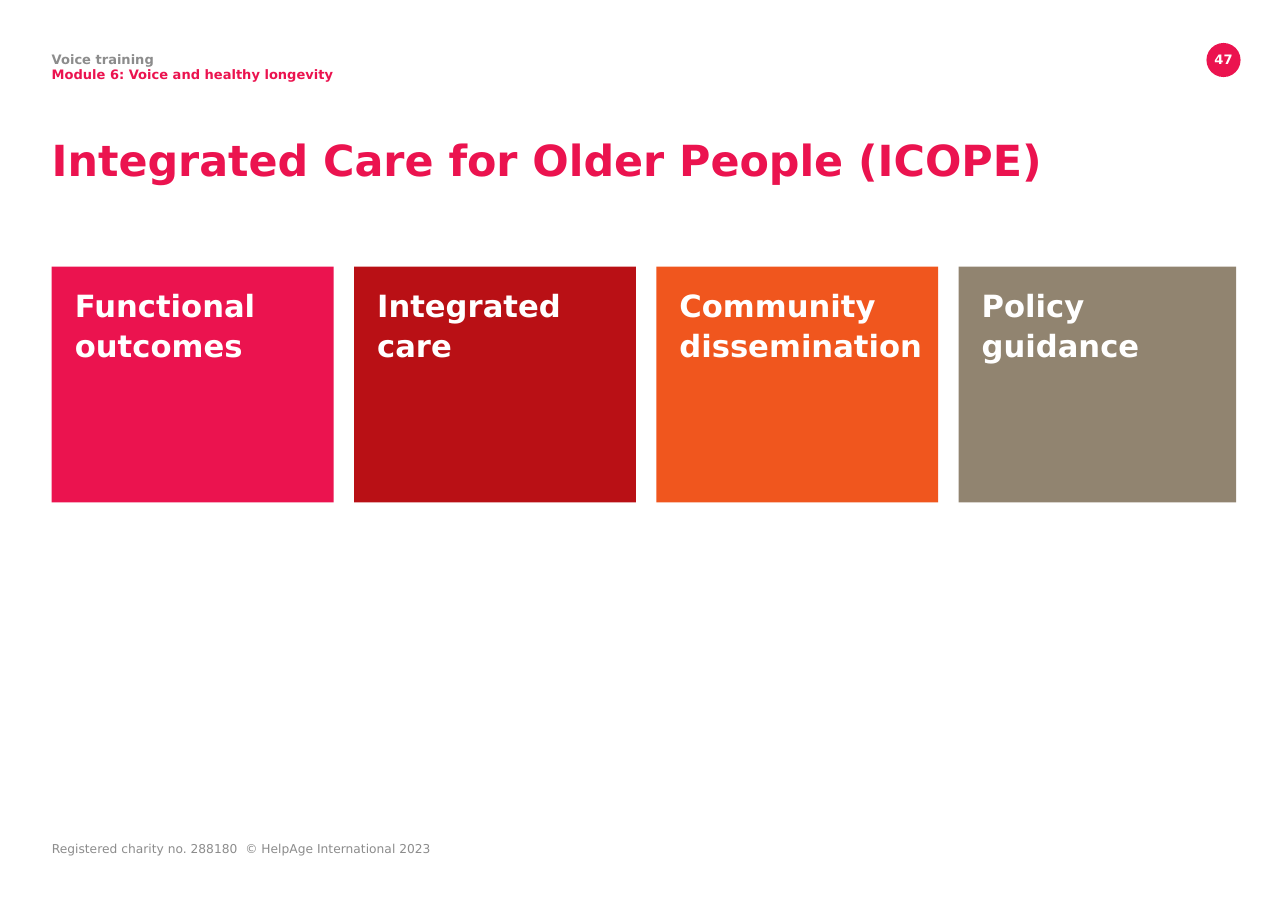
from dataclasses import dataclass

from pptx import Presentation
from pptx.dml.color import RGBColor
from pptx.enum.shapes import MSO_SHAPE
from pptx.enum.text import MSO_ANCHOR, PP_ALIGN
from pptx.util import Inches, Pt

RECT, OVAL = MSO_SHAPE.RECTANGLE, MSO_SHAPE.OVAL
TOP = MSO_ANCHOR.TOP
LEFT, CENTER = PP_ALIGN.LEFT, PP_ALIGN.CENTER


@dataclass(frozen=True)
class Theme:
    font: str = "DejaVu Sans"
    pink: str = "EB134F"
    red: str = "B91015"
    orange: str = "F0561E"
    taupe: str = "918470"
    grey: str = "8C8C8C"
    white: str = "FFFFFF"
    title: float = 28
    card: float = 20
    header: float = 8.5
    footer: float = 8


THEME = Theme()
MARGIN = 0.47
CARD_TOP, CARD_HEIGHT = 2.42, 2.14
CARD_PITCH = (8.7 - MARGIN) / 3
CARDS = [
    ("Functional outcomes", THEME.pink, 2.56),
    ("Integrated care", THEME.red, 2.56),
    ("Community dissemination", THEME.orange, 2.56),
    ("Policy guidance", THEME.taupe, 2.52),
]


def set_frame(tf, left=0, top=0, right=0, bottom=0):
    tf.word_wrap = True
    tf.vertical_anchor = TOP
    tf.margin_left, tf.margin_top = Inches(left), Inches(top)
    tf.margin_right, tf.margin_bottom = Inches(right), Inches(bottom)


def style_paragraph(p, text, size, color, bold=True, spacing=None, align=LEFT):
    p.text = text
    p.alignment = align
    if spacing:
        p.line_spacing = Pt(spacing)
    p.font.name = THEME.font
    p.font.size = Pt(size)
    p.font.bold = bold
    p.font.color.rgb = RGBColor.from_string(color)


def add_text(slide, box, lines, size, **style):
    """Add a text box; lines holds one (text, colour) pair per paragraph."""
    tf = slide.shapes.add_textbox(*map(Inches, box)).text_frame
    set_frame(tf)
    for i, (text, color) in enumerate(lines):
        p = tf.add_paragraph() if i else tf.paragraphs[0]
        style_paragraph(p, text, size, color, **style)


def add_block(slide, kind, box, color):
    sp = slide.shapes.add_shape(kind, *map(Inches, box))
    sp.shadow.inherit = False
    sp.fill.solid()
    sp.fill.fore_color.rgb = RGBColor.from_string(color)
    sp.line.fill.background()
    return sp


def add_card(slide, box, text, color):
    tf = add_block(slide, RECT, box, color).text_frame
    set_frame(tf, left=0.21, top=0.16, right=0.08, bottom=0.08)
    style_paragraph(tf.paragraphs[0], text, THEME.card, THEME.white, spacing=26)


def add_page_number(slide, number):
    add_block(slide, OVAL, (10.95, 0.39, 0.31, 0.31), THEME.pink)
    add_text(slide, (10.95, 0.47, 0.31, 0.22), [(number, THEME.white)],
             THEME.header, align=CENTER)


def main():
    prs = Presentation()
    prs.slide_width, prs.slide_height = Inches(11.69), Inches(8.27)
    slide = prs.slides.add_slide(prs.slide_layouts[6])

    add_page_number(slide, "47")
    add_text(slide, (MARGIN, 7.64, 4.61, 0.33),
             [("Registered charity no. 288180  © HelpAge International 2023", THEME.grey)],
             THEME.footer, bold=False)
    add_text(slide, (MARGIN, 1.22, 9.24, 0.77),
             [("Integrated Care for Older People (ICOPE)", THEME.pink)],
             THEME.title, spacing=33)
    add_text(slide, (MARGIN, 0.47, 5.13, 0.44),
             [("Voice training", THEME.grey),
              ("Module 6: Voice and healthy longevity", THEME.pink)],
             THEME.header, spacing=10)

    for i, (text, color, width) in enumerate(CARDS):
        box = (MARGIN + i * CARD_PITCH, CARD_TOP, width, CARD_HEIGHT)
        add_card(slide, box, text, color)

    prs.save("out.pptx")


if __name__ == "__main__":
    main()
